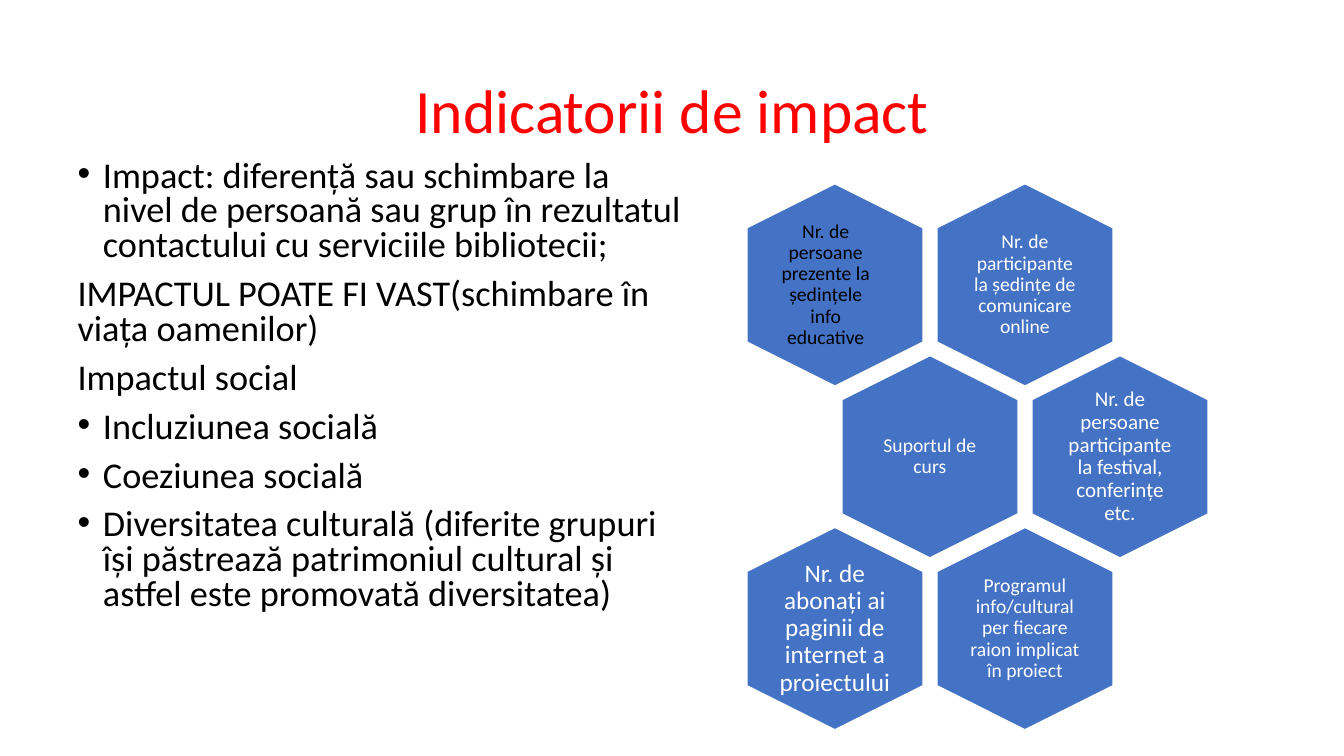
from dataclasses import dataclass

from pptx import Presentation
from pptx import util as u
from pptx.dml.color import RGBColor
from pptx.enum import shapes, text
from pptx.oxml.xmlchemy import OxmlElement


@dataclass(frozen=True)
class Theme:
    font: str = "Calibri"
    title_color: str = "FF0000"
    dark: str = "000000"
    light: str = "FFFFFF"
    hexagon: str = "4472C4"
    title_size: float = 44
    body_size: float = 25.9
    label_size: float = 14
    festival_size: float = 15
    subscribers_size: float = 18


THEME = Theme()

TITLE = "Indicatorii de impact"

# Text, bulleted
BODY = [
    ("Impact: diferență sau schimbare la nivel de persoană sau grup în rezultatul "
     "contactului cu serviciile bibliotecii;", True),
    ("IMPACTUL POATE FI VAST(schimbare în viața oamenilor)", False),
    ("Impactul social", False),
    ("Incluziunea socială", True),
    ("Coeziunea socială", True),
    ("Diversitatea culturală (diferite grupuri își păstrează patrimoniul cultural și "
     "astfel este promovată diversitatea)", True),
]

# Row, column and text, with any label settings that differ from the usual
INDICATORS = [
    (0, 0, "Nr. de persoane prezente la ședințele info educative",
     {"color": THEME.dark, "width": 2.82, "shift": -0.23}),
    (0, 1, "Nr. de participante la ședințe de comunicare online", {}),
    (1, 0, "Suportul de curs", {}),
    (1, 1, "Nr. de persoane participante la festival, conferințe etc.",
     {"size": THEME.festival_size, "inset": 0}),
    (2, 0, "Nr. de abonați ai paginii de internet a proiectului",
     {"size": THEME.subscribers_size, "inset": 0}),
    (2, 1, "Programul info/cultural per fiecare raion implicat în proiect", {}),
]

FIRST_CENTER = (21.04, 7.18)
COLUMN_PITCH, ROW_PITCH = 4.79, 4.33
HEXAGON_SIZE = (5.1, 4.44)
LABEL_HEIGHT = 3.5


def apply(target, values):
    for name, value in values.items():
        setattr(target, name, value)


def place(shape, left, top, width, height):
    apply(shape, {"left": u.Cm(left), "top": u.Cm(top),
                  "width": u.Cm(width), "height": u.Cm(height)})


def box_around(center, width, height):
    return [u.Cm(length) for length in
            (center[0] - width / 2, center[1] - height / 2, width, height)]


def write(paragraph, words, size, color, **layout):
    run = paragraph.add_run()
    run.text = words
    apply(run.font, {"name": THEME.font, "size": u.Pt(size)})
    run.font.color.rgb = RGBColor.from_string(color)
    apply(paragraph, layout)


def set_bullet(paragraph, bulleted):
    properties = paragraph._p.get_or_add_pPr()
    indent = u.Cm(0.64) if bulleted else 0
    properties.set("marL", str(indent))
    properties.set("indent", str(-indent))
    bullet = OxmlElement("a:buChar" if bulleted else "a:buNone")
    if bulleted:
        bullet.set("char", "•")
    properties.append(bullet)


def fill_title(title):
    place(title, 2.34, 1.02, 29.21, 3.68)
    title.text_frame.vertical_anchor = text.MSO_ANCHOR.MIDDLE
    write(title.text_frame.paragraphs[0], TITLE, THEME.title_size, THEME.title_color,
          alignment=text.PP_ALIGN.CENTER, line_spacing=0.9)


def fill_body(body):
    place(body, 1.7, 3.91, 15.8, 12.47)
    frame = body.text_frame
    frame.auto_size = text.MSO_AUTO_SIZE.NONE
    for index, (words, bulleted) in enumerate(BODY):
        paragraph = frame.add_paragraph() if index else frame.paragraphs[0]
        write(paragraph, words, THEME.body_size, THEME.dark,
              line_spacing=0.8, space_before=u.Pt(10))
        set_bullet(paragraph, bulleted)


def add_hexagon(slide, center):
    hexagon = slide.shapes.add_shape(
        shapes.MSO_SHAPE.HEXAGON, *box_around(center, *HEXAGON_SIZE))
    hexagon.rotation = 90
    hexagon.shadow.inherit = False
    hexagon.fill.solid()
    hexagon.fill.fore_color.rgb = RGBColor.from_string(THEME.hexagon)
    hexagon.line.color.rgb = RGBColor.from_string(THEME.light)
    hexagon.line.width = u.Pt(1)


def add_label(slide, center, words, size=THEME.label_size, color=THEME.light,
              width=3.05, shift=0, inset=0.15):
    middle = (center[0] + shift, center[1])
    label = slide.shapes.add_textbox(*box_around(middle, width, LABEL_HEIGHT))
    frame = label.text_frame
    apply(frame, {"word_wrap": True, "vertical_anchor": text.MSO_ANCHOR.MIDDLE})
    apply(frame, {f"margin_{side}": u.Cm(inset)
                  for side in ("left", "top", "right", "bottom")})
    write(frame.paragraphs[0], words, size, color,
          alignment=text.PP_ALIGN.CENTER, line_spacing=0.9)


def add_indicator(slide, row, column, words, settings):
    """Put a labelled hexagon in the honeycomb; odd rows sit half a pitch right."""
    center = (FIRST_CENTER[0] + (column + row % 2 / 2) * COLUMN_PITCH,
              FIRST_CENTER[1] + row * ROW_PITCH)
    add_hexagon(slide, center)
    add_label(slide, center, words, **settings)


def main():
    presentation = Presentation()
    apply(presentation, {"slide_width": u.Cm(33.87), "slide_height": u.Cm(19.05)})
    slide = presentation.slides.add_slide(presentation.slide_layouts[1])
    fill_title(slide.shapes.title)
    fill_body(slide.placeholders[1])
    for indicator in INDICATORS:
        add_indicator(slide, *indicator)
    presentation.save("out.pptx")


if __name__ == "__main__":
    main()
